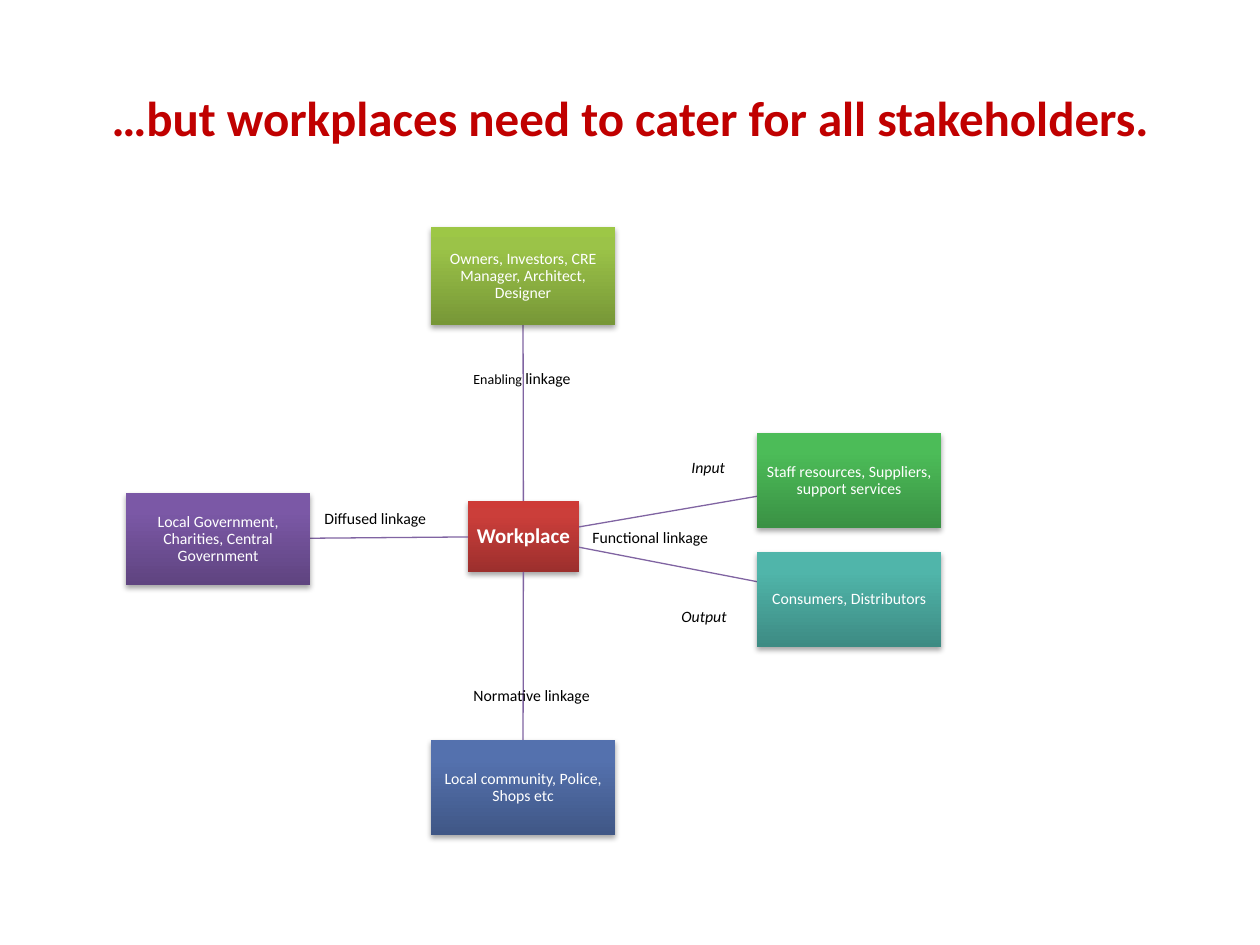
from lxml import etree
from copy import deepcopy
from pptx import Presentation
from pptx.dml.color import RGBColor
from pptx.enum.shapes import MSO_CONNECTOR, MSO_SHAPE
from pptx.enum.text import MSO_ANCHOR, MSO_AUTO_SIZE, PP_ALIGN
from pptx.oxml.ns import qn
from pptx.util import Pt

PX = 914400 // 126
FONT = "Calibri"
LINK_COLOR = "8064A2"

TITLE = "…but workplaces need to cater for all stakeholders."

# text, (left, top, width, height), gradient colours from bottom to top
WORKPLACE = ("Workplace", (468, 501, 111, 71), ("9C2F2D", "CB3E3A", "CE3B37"))
STAKEHOLDERS = [
    ("Owners, Investors, CRE Manager, Architect, Designer",
     (431, 227, 184, 98), ("779737", "9BC348", "9DC746")),
    ("Staff resources, Suppliers, support services",
     (757, 433, 184, 95), ("3A9144", "4CBC58", "4ABF57")),
    ("Consumers, Distributors",
     (757, 552, 184, 95), ("3D8B83", "50B5AA", "4EB8AC")),
    ("Local community, Police, Shops etc",
     (431, 740, 184, 95), ("405786", "5471AE", "5271B0")),
    ("Local Government, Charities, Central Government",
     (126, 493, 184, 92), ("5F4480", "7B58A6", "7C57A8")),
]
GRADIENT_POSITIONS = (0, 0.8, 1)

# (left, top, width), runs of (text, size), italic
LABEL_HEIGHT = 31
LABELS = [
    ((461, 363, 125), [("Enabling ", 8), ("linkage", 9)], False),
    ((580, 522, 144), [("Functional linkage", 9)], False),
    ((461, 680, 144), [("Normative linkage", 9)], False),
    ((312, 503, 129), [("Diffused linkage", 9)], False),
    ((679, 452, 59), [("Input", 9)], True),
    ((669, 601, 71), [("Output", 9)], True),
]


def emu(lengths):
    return [round(length * PX) for length in lengths]


def rgb(color):
    return RGBColor.from_string(color)


def add_run(paragraph, text, size, color, bold=False, italic=False):
    run = paragraph.add_run()
    run.text = text
    font = run.font
    font.name, font.size, font.bold, font.italic = FONT, Pt(size), bold, italic
    font.color.rgb = rgb(color)


def fill_gradient(shape, colors):
    shape.fill.gradient()
    shape.fill.gradient_angle = 90
    stop_list = shape.fill._xPr.find(qn("a:gradFill")).find(qn("a:gsLst"))
    stop_list.append(deepcopy(stop_list[-1]))
    for stop, position, color in zip(shape.fill.gradient_stops, GRADIENT_POSITIONS, colors):
        stop.position = position
        stop.color.rgb = rgb(color)


def add_soft_shadow(shape):
    shape.shadow.inherit = False
    effects = shape._element.spPr.find(qn("a:effectLst"))
    shadow = etree.SubElement(effects, qn("a:outerShdw"), blurRad="40000", dist="23000",
                              dir="5400000", rotWithShape="0")
    black = etree.SubElement(shadow, qn("a:srgbClr"), val="000000")
    etree.SubElement(black, qn("a:alpha"), val="35000")


def add_box(slide, text, bounds, colors, size=9, bold=False):
    box = slide.shapes.add_shape(MSO_SHAPE.RECTANGLE, *emu(bounds))
    box.line.fill.background()
    fill_gradient(box, colors)
    add_soft_shadow(box)
    frame = box.text_frame
    frame.word_wrap = True
    frame.vertical_anchor = MSO_ANCHOR.MIDDLE
    frame.margin_left = frame.margin_right = frame.margin_top = frame.margin_bottom = PX
    paragraph = frame.paragraphs[0]
    paragraph.alignment = PP_ALIGN.CENTER
    paragraph.line_spacing = 0.9
    add_run(paragraph, text, size, "FFFFFF", bold)


def center(bounds):
    left, top, width, height = bounds
    return left + width / 2, top + height / 2


def edge_point(bounds, target):
    """Point where the line from the box centre to the target leaves the box."""
    x, y = center(bounds)
    dx, dy = target[0] - x, target[1] - y
    share = 1 / max(abs(dx) / (bounds[2] / 2), abs(dy) / (bounds[3] / 2))
    return x + dx * share, y + dy * share


def add_link(slide, start, end):
    link = slide.shapes.add_connector(MSO_CONNECTOR.STRAIGHT, *emu(start + end))
    link.line.color.rgb = rgb(LINK_COLOR)
    link.line.width = Pt(0.75)
    etree.SubElement(link._element.spPr, qn("a:effectLst"))


def add_title(slide):
    title = slide.shapes.add_textbox(*emu((63, 38, 1134, 157)))
    frame = title.text_frame
    frame.word_wrap = True
    frame.vertical_anchor = MSO_ANCHOR.MIDDLE
    frame.paragraphs[0].alignment = PP_ALIGN.CENTER
    add_run(frame.paragraphs[0], TITLE, 28, "C00000", bold=True)


def add_label(slide, place, runs, italic):
    label = slide.shapes.add_textbox(*emu((*place, LABEL_HEIGHT)))
    frame = label.text_frame
    frame.word_wrap = False
    frame.auto_size = MSO_AUTO_SIZE.SHAPE_TO_FIT_TEXT
    for text, size in runs:
        add_run(frame.paragraphs[0], text, size, "000000", italic=italic)


def main():
    deck = Presentation()
    deck.slide_width, deck.slide_height = emu((1260, 945))
    slide = deck.slides.add_slide(deck.slide_layouts[6])
    add_title(slide)
    add_box(slide, *WORKPLACE, size=12, bold=True)
    hub = WORKPLACE[1]
    for text, bounds, colors in STAKEHOLDERS:
        add_link(slide, edge_point(hub, center(bounds)), edge_point(bounds, center(hub)))
        add_box(slide, text, bounds, colors)
    for label in LABELS:
        add_label(slide, *label)
    deck.save("out.pptx")


if __name__ == "__main__":
    main()
